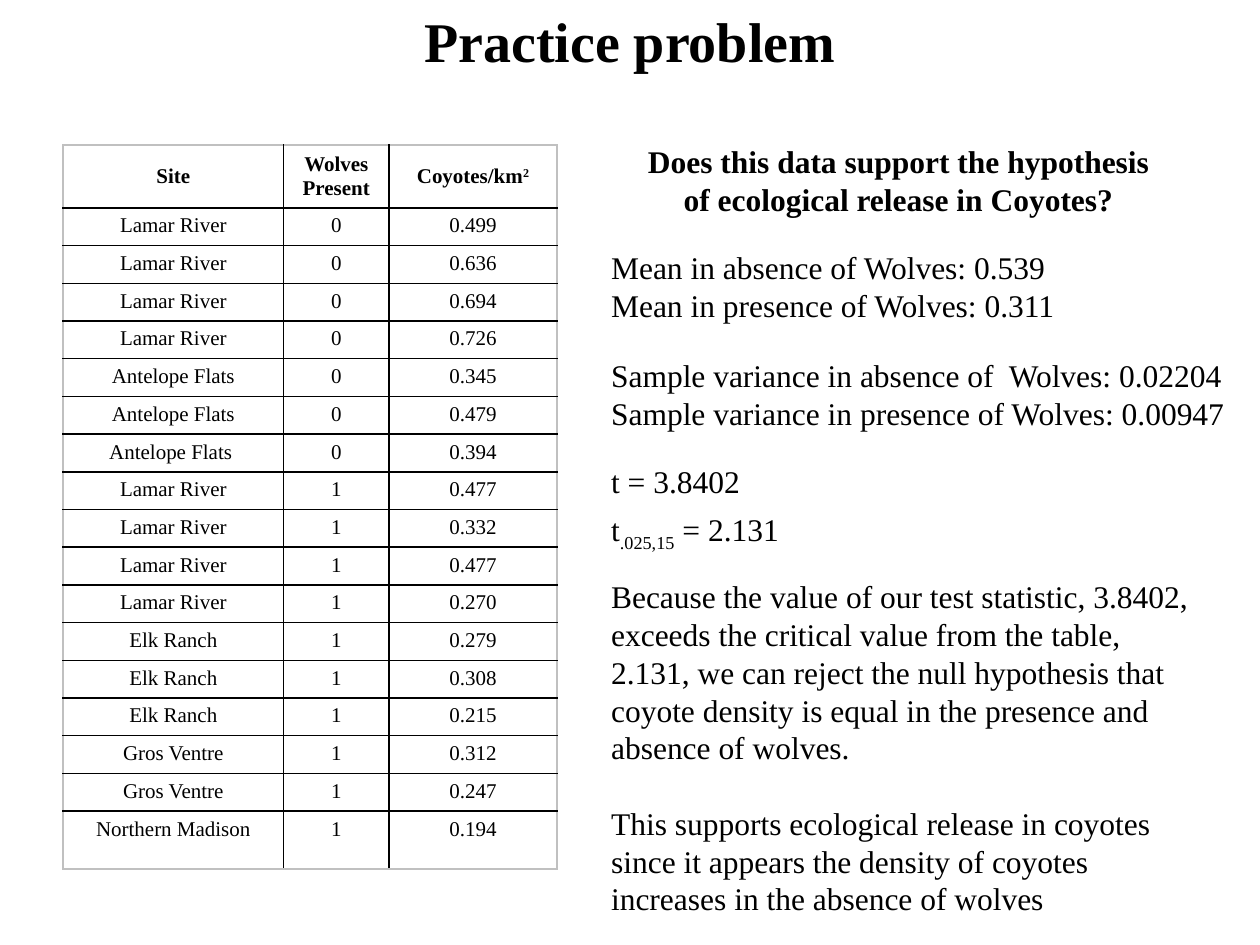
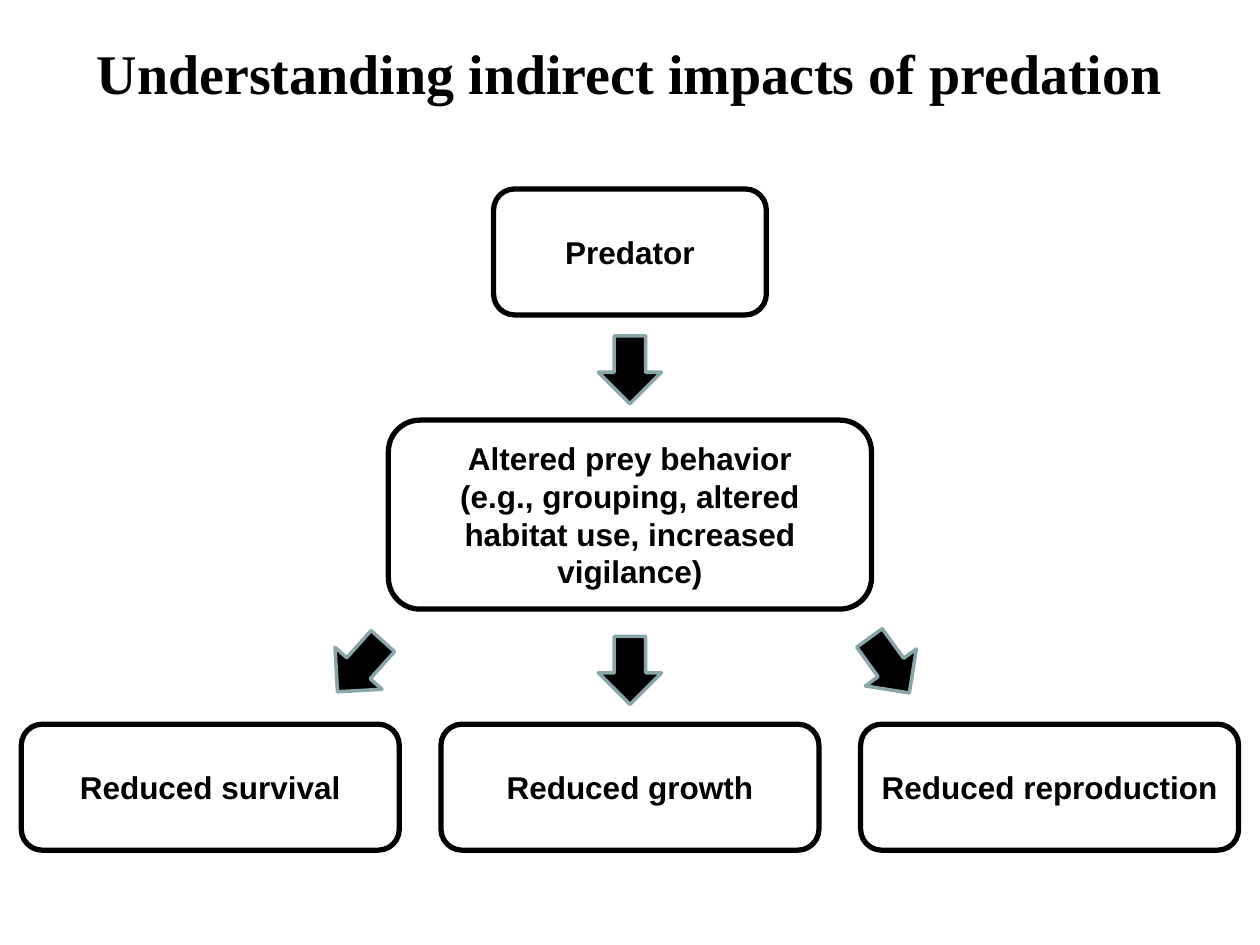
import dataclasses
import typing

import pptx
import pptx.dml.color
import pptx.enum.shapes
import pptx.enum.text
import pptx.oxml
import pptx.oxml.ns
import pptx.util

Cm = pptx.util.Cm
Pt = pptx.util.Pt
Align = pptx.enum.text.PP_ALIGN
Anchor = pptx.enum.text.MSO_ANCHOR
Fit = pptx.enum.text.MSO_AUTO_SIZE
Form = pptx.enum.shapes.MSO_SHAPE

BLACK, GRAY, TEAL = "000000", "C0C0C0", "8AA6A8"
SERIF, SANS = "Times New Roman", "Arial"
WIDTH, HEIGHT = 25.4, 19.05
MIDDLE = WIDTH / 2


@dataclasses.dataclass
class Note:
    left: float
    top: float
    width: float
    height: float
    lines: list[str]
    bold: bool = False
    wrap: bool = False
    gap: float = 0


@dataclasses.dataclass
class Box:
    center: float
    top: float
    width: float
    height: float
    lines: list[str]


@dataclasses.dataclass
class Arrow:
    center: float
    top: float
    turn: float = 0


@dataclasses.dataclass
class Group:
    site: str
    wolves: int
    counts: list[str]


HEADS = ["Site", "Wolves Present", "Coyotes/km^2"]
COLUMNS = [4.45, 2.12, 3.39]
GROUPS = [
    Group("Lamar River", 0, ["0.499", "0.636", "0.694", "0.726"]),
    Group("Antelope Flats", 0, ["0.345", "0.479"]),
    Group("Antelope Flats ", 0, ["0.394"]),
    Group("Lamar River", 1, ["0.477", "0.332", "0.477", "0.270"]),
    Group("Elk Ranch", 1, ["0.279", "0.308", "0.215"]),
    Group("Gros Ventre", 1, ["0.312", "0.247"]),
    Group("Northern Madison", 1, ["0.194"]),
]
MARGIN = 12.07
NOTES = [
    Note(12.5, 2.74, 11.23, 1.8,
         ["Does this data support the hypothesis of ecological release in Coyotes?"],
         bold=True, wrap=True),
    Note(MARGIN, 4.88, 9.55, 1.8,
         ["Mean in absence of Wolves: 0.539", "Mean in presence of Wolves: 0.311"]),
    Note(MARGIN, 7.06, 13, 1.8,
         ["Sample variance in absence of  Wolves: 0.02204",
          "Sample variance in presence of Wolves: 0.00947"]),
    Note(MARGIN, 9.19, 3.12, 1.02, ["t = 3.8402"]),
    Note(MARGIN, 10.16, 4.09, 1.02, ["t_.025,15_ = 2.131"]),
    Note(MARGIN, 11.51, 12.5, 7.19,
         ["Because the value of our test statistic, 3.8402, exceeds the critical value "
          "from the table, 2.131, we can reject the null hypothesis that coyote density "
          "is equal in the presence and absence of wolves.",
          "This supports ecological release in coyotes since it appears the density of "
          "coyotes increases in the absence of wolves"], wrap=True, gap=21.5),
]
EFFECTS = ["Reduced survival", "Reduced growth", "Reduced reproduction"]
PITCH = 8.46
BOXES = [
    Box(MIDDLE, 3.81, 5.5, 2.54, ["Predator"]),
    Box(MIDDLE, 8.47, 9.74, 3.81,
        ["Altered prey behavior",
         "(e.g., grouping, altered habitat use, increased vigilance)"]),
] + [Box(MIDDLE + (spot - 1) * PITCH, 14.6, 7.62, 2.54, [effect])
     for spot, effect in enumerate(EFFECTS)]
ARROWS = [
    Arrow(MIDDLE, 6.77),
    Arrow(MIDDLE, 12.83),
    Arrow(17.93, 12.73, 324.1),
    Arrow(7.26, 12.75, 41.8),
]


def color(code: str) -> pptx.dml.color.RGBColor:
    return pptx.dml.color.RGBColor.from_string(code)


def fill_text(frame: typing.Any, lines: list[str], size: float, face: str,
              bold: bool, align: typing.Any, gap: float = 0) -> None:
    for index, line in enumerate(lines):
        para = frame.add_paragraph() if index else frame.paragraphs[0]
        para.alignment = align
        para.font.size, para.font.name = Pt(size), face
        para.font.bold = bold
        para.font.color.rgb = color(BLACK)
        if index and gap:
            para.space_before = Pt(gap)
        mark, shift = ("^", "30000") if "^" in line else ("_", "-25000")
        for turn, part in enumerate(line.split(mark)):
            run = para.add_run()
            run.text = part
            if turn == 1:
                run.font._element.set("baseline", shift)


def add_page(deck: typing.Any, title: str, top: float) -> typing.Any:
    page = deck.slides.add_slide(deck.slide_layouts[5])
    head = page.shapes.title
    head.left, head.top, head.width, head.height = Cm(0), Cm(top), Cm(WIDTH), Cm(1.6)
    head.text_frame.auto_size = Fit.NONE
    head.text_frame.vertical_anchor = Anchor.TOP
    fill_text(head.text_frame, [title], 32, SERIF, True, Align.CENTER)
    return page


def add_edge(cell: typing.Any, side: str, code: str) -> None:
    space = pptx.oxml.ns.nsdecls("a")
    cell._tc.get_or_add_tcPr().append(pptx.oxml.parse_xml(
        f'<a:{side} {space} w="12700"><a:solidFill><a:srgbClr val="{code}"/>'
        f'</a:solidFill></a:{side}>'))


def add_grid(page: typing.Any) -> None:
    rows = [HEADS] + [[group.site, str(group.wolves), count]
                      for group in GROUPS for count in group.counts]
    heights = [1.27] + [0.76] * (len(rows) - 2) + [1.17]
    grid = page.shapes.add_table(len(rows), len(COLUMNS), Cm(1.27), Cm(2.92),
                                 Cm(sum(COLUMNS)), Cm(sum(heights))).table
    grid.first_row = grid.horz_banding = False
    for column, width in zip(grid.columns, COLUMNS):
        column.width = Cm(width)
    for row, height in zip(grid.rows, heights):
        row.height = Cm(height)
    for down, texts in enumerate(rows):
        for across, text in enumerate(texts):
            cell = grid.cell(down, across)
            cell.vertical_anchor = Anchor.TOP if down else Anchor.MIDDLE
            fill_text(cell.text_frame, [text], 12, SERIF, down == 0, Align.CENTER)
            outer = {"lnL": across == 0, "lnR": across == len(texts) - 1,
                     "lnT": down == 0, "lnB": down == len(rows) - 1}
            for side, rim in outer.items():
                add_edge(cell, side, GRAY if rim else BLACK)
            cell.fill.background()


def add_note(page: typing.Any, note: Note) -> None:
    frame = page.shapes.add_textbox(Cm(note.left), Cm(note.top), Cm(note.width),
                                    Cm(note.height)).text_frame
    frame.word_wrap = note.wrap
    align = Align.CENTER if note.bold else Align.LEFT
    fill_text(frame, note.lines, 18, SERIF, note.bold, align, note.gap)


def add_form(page: typing.Any, kind: typing.Any, center: float, top: float,
             width: float, height: float, line: str, weight: float) -> typing.Any:
    shape = page.shapes.add_shape(kind, Cm(center - width / 2), Cm(top),
                                  Cm(width), Cm(height))
    shape.shadow.inherit = False
    shape.line.color.rgb = color(line)
    shape.line.width = Pt(weight)
    return shape


def add_box(page: typing.Any, box: Box) -> None:
    shape = add_form(page, Form.ROUNDED_RECTANGLE, box.center, box.top,
                     box.width, box.height, BLACK, 3)
    shape.fill.background()
    shape.text_frame.word_wrap = True
    shape.text_frame.vertical_anchor = Anchor.MIDDLE
    fill_text(shape.text_frame, box.lines, 18, SANS, True, Align.CENTER)


def add_arrow(page: typing.Any, arrow: Arrow) -> None:
    shape = add_form(page, Form.DOWN_ARROW, arrow.center, arrow.top, 1.27, 1.37, TEAL, 2)
    shape.fill.solid()
    shape.fill.fore_color.rgb = color(BLACK)
    shape.rotation = arrow.turn


def main() -> None:
    deck = pptx.Presentation()
    deck.slide_width, deck.slide_height = Cm(WIDTH), Cm(HEIGHT)
    page = add_page(deck, "Practice problem", 0)
    add_grid(page)
    for note in NOTES:
        add_note(page, note)
    page = add_page(deck, "Understanding indirect impacts of predation", 0.64)
    for box in BOXES:
        add_box(page, box)
    for arrow in ARROWS:
        add_arrow(page, arrow)
    deck.save("out.pptx")


if __name__ == "__main__":
    main()
